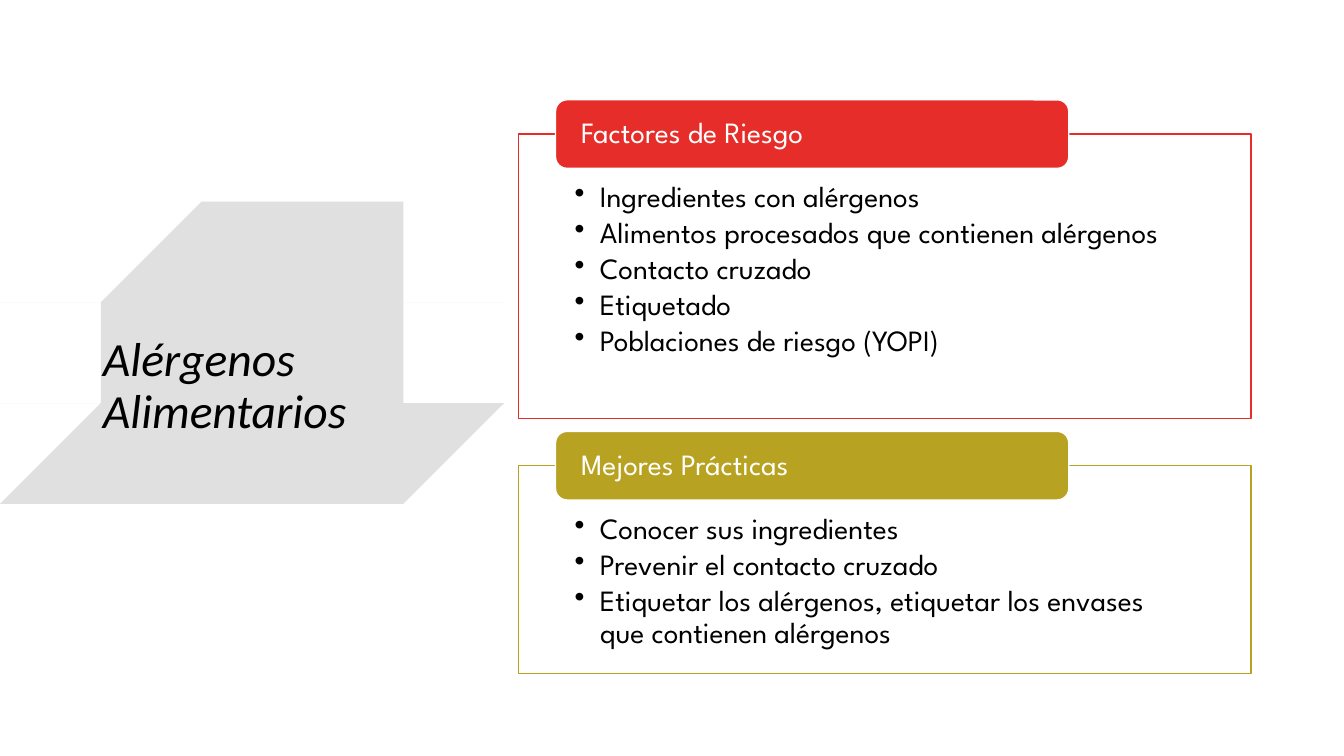
from lxml import etree
from pptx import Presentation
from pptx.dml.color import RGBColor
from pptx.enum import shapes, text
from pptx.oxml.ns import qn
from pptx.util import Inches, Pt

COLORS = {"brush": "D9D9D9", "red": "E72D29", "olive": "B8A221",
          "white": "FFFFFF", "black": "000000"}


def rgb(name):
    return RGBColor.from_string(COLORS[name])


def write(tf, lines, *, font, size, color, italic=False, bullet=False,
          anchor=text.MSO_ANCHOR.MIDDLE, insets=(0.1, 0.05), after=0):
    tf.word_wrap = True
    tf.auto_size = text.MSO_AUTO_SIZE.NONE
    tf.vertical_anchor = anchor
    tf.margin_left = tf.margin_right = Inches(insets[0])
    tf.margin_top = tf.margin_bottom = Inches(insets[1])
    for i, line in enumerate(lines):
        p = tf.add_paragraph() if i else tf.paragraphs[0]
        p.alignment = text.PP_ALIGN.LEFT
        p.line_spacing = 0.9
        p.space_before = Pt(0)
        p.space_after = Pt(after)
        if bullet:
            pPr = p._p.get_or_add_pPr()
            pPr.set("marL", str(Inches(0.25)))
            pPr.set("indent", str(Inches(-0.25)))
            etree.SubElement(pPr, qn("a:buChar"), char="•")
        r = p.add_run()
        r.text = line
        r.font.name, r.font.size, r.font.italic = font, Pt(size), italic
        r.font.color.rgb = rgb(color)


prs = Presentation()
prs.slide_width, prs.slide_height = Inches(13.33), Inches(7.5)
s = prs.slides.add_slide(prs.slide_layouts[5])

# Brush stroke behind the title, clockwise from the top
BRUSH = [
    (2.59, 2.32), (3.85, 2.34), (4.39, 2.42), (3.98, 2.6), (4.52, 2.86),
    (4.65, 3.06), (4.58, 3.17), (4.59, 3.37), (4.49, 3.41), (4.5, 3.73),
    (4.58, 4.2), (4.64, 4.3), (4.42, 4.51), (4.3, 5.04), (4.12, 5.2),
    (2.89, 5.36), (2.02, 5.26), (1.26, 5.04), (0.86, 4.93), (0.47, 4.88),
    (1.08, 4.61), (0.27, 4.55), (0.73, 4.17), (0.18, 4.08), (0.68, 3.79),
    (0.53, 3.68), (0.91, 3.52), (1.01, 3.32), (0.27, 3.33), (0.59, 3.18),
    (0.36, 3.1), (1.07, 2.73), (1.54, 2.63), (1.13, 2.55), (1.81, 2.37),
]
fb = s.shapes.build_freeform(*BRUSH[0], scale=Inches(1))
fb.add_line_segments(BRUSH[1:], close=True)
brush = fb.convert_to_shape()
brush.shadow.inherit = False
brush.fill.solid()
brush.fill.fore_color.rgb = rgb("brush")
brush.line.fill.background()
srgb = brush._element.spPr.find(".//" + qn("a:srgbClr"))
etree.SubElement(srgb, qn("a:alpha"), val="80000")

# Title, brought in front of the brush stroke
title = s.shapes.title
s.shapes._spTree.append(title._element)
title.left, title.top, title.width, title.height = map(Inches, (0.92, 1.64, 3.52, 4.4))
write(title.text_frame, ["Alérgenos Alimentarios"], font="Calibri", size=34,
      color="black", italic=True)

# Framed lists, each with a heading tab over its top edge
PANELS = [
    ("Factores de Riesgo", "red", 1.33, 2.82,
     ["Ingredientes con alérgenos", "Alimentos procesados que contienen alérgenos",
      "Contacto cruzado", "Etiquetado", "Poblaciones de riesgo (YOPI)"]),
    ("Mejores Prácticas", "olive", 4.62, 2.06,
     ["Conocer sus ingredientes", "Prevenir el contacto cruzado",
      "Etiquetar los alérgenos, etiquetar los envases que contienen alérgenos"]),
]
for heading, color, top, height, items in PANELS:
    frame = s.shapes.add_shape(shapes.MSO_SHAPE.RECTANGLE, Inches(5.14), Inches(top),
                               Inches(7.27), Inches(height))
    tab = s.shapes.add_shape(shapes.MSO_SHAPE.ROUNDED_RECTANGLE, Inches(5.51),
                             Inches(top - 0.34), Inches(5.09), Inches(0.68))
    for sp, fill, line in ((frame, "white", color), (tab, color, "white")):
        sp.shadow.inherit = False
        sp.fill.solid()
        sp.fill.fore_color.rgb = rgb(fill)
        sp.line.color.rgb = rgb(line)
        sp.line.width = Pt(1)
    write(frame.text_frame, items, font="League Spartan", size=21, color="black",
          bullet=True, anchor=text.MSO_ANCHOR.TOP, insets=(0.56, 0.48), after=3)
    write(tab.text_frame, [heading], font="League Spartan", size=21, color="white",
          insets=(0.22, 0))

prs.save("out.pptx")
